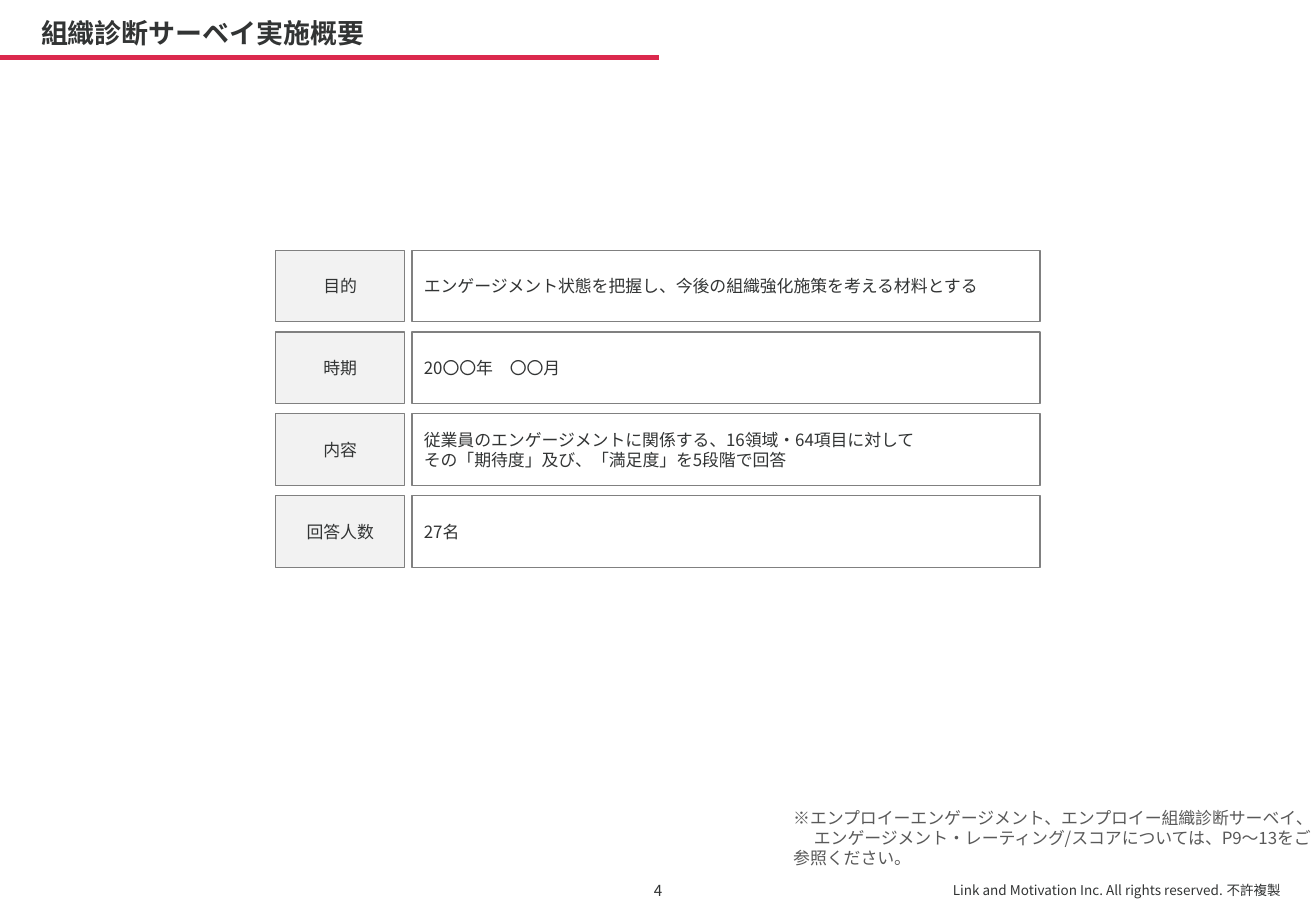
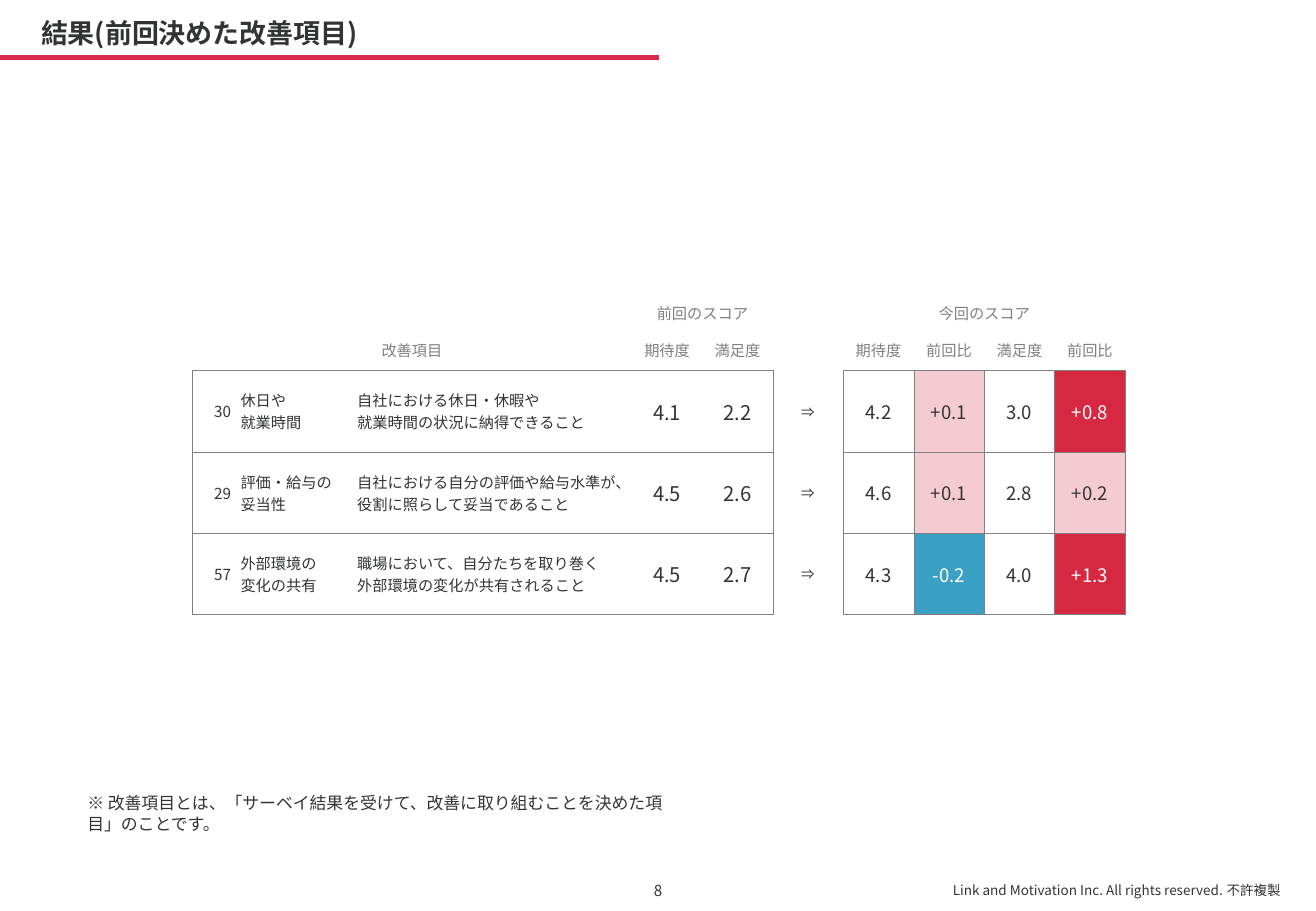
from lxml import etree
from pptx import Presentation
from pptx.dml.color import RGBColor
from pptx.enum.shapes import MSO_CONNECTOR, MSO_SHAPE
from pptx.enum.text import MSO_ANCHOR, PP_ALIGN
from pptx.oxml.ns import qn
from pptx.util import Inches, Pt

FONT = "Noto Sans CJK JP"
INK = RGBColor(0x32, 0x34, 0x34)
NOTE_GRAY = RGBColor(0x59, 0x59, 0x59)
GRAY = RGBColor(0x80, 0x80, 0x80)
LABEL_GRAY = RGBColor(0xF2, 0xF2, 0xF2)
WHITE = RGBColor(0xFF, 0xFF, 0xFF)
TITLE_RED = RGBColor(0xDB, 0x29, 0x4D)
RED = RGBColor(0xD6, 0x29, 0x41)
PINK = RGBColor(0xF5, 0xCB, 0xD2)
BLUE = RGBColor(0x3A, 0xA1, 0xC5)


def write(frame, text, size=10, color=INK, bold=False, align=PP_ALIGN.LEFT,
          spacing=None):
    """Fill a text frame, one paragraph per line of text."""
    frame.word_wrap = True
    for i, line in enumerate(text.split("\n")):
        paragraph = frame.paragraphs[0] if i == 0 else frame.add_paragraph()
        paragraph.alignment = align
        if spacing:
            paragraph.line_spacing = spacing
        run = paragraph.add_run()
        run.text = line
        run.font.name = FONT
        run.font.size = Pt(size)
        run.font.bold = bold
        run.font.color.rgb = color
        etree.SubElement(run.font._element, qn("a:ea"), typeface=FONT)
    return frame


def add_text(slide, left, top, width, height, text, anchor=MSO_ANCHOR.MIDDLE, **style):
    box = slide.shapes.add_textbox(Inches(left), Inches(top), Inches(width), Inches(height))
    box.text_frame.vertical_anchor = anchor
    return write(box.text_frame, text, **style)


prs = Presentation()
prs.slide_width = Inches(10.83)
prs.slide_height = Inches(7.5)

# Shared title, rule and footer
slides = []
for title, page in [("組織診断サーベイ実施概要", "4"), ("結果(前回決めた改善項目)", "8")]:
    slide = prs.slides.add_slide(prs.slide_layouts[6])
    rule = slide.shapes.add_connector(
        MSO_CONNECTOR.STRAIGHT, Inches(0), Inches(0.47), Inches(5.42), Inches(0.47))
    rule.line.color.rgb = TITLE_RED
    rule.line.width = Pt(3)
    etree.SubElement(rule._element.spPr, qn("a:effectLst"))
    add_text(slide, 0.24, 0, 7.37, 0.46, title, anchor=MSO_ANCHOR.BOTTOM,
             size=16, bold=True, spacing=0.9)
    add_text(slide, 5.17, 7.16, 0.49, 0.34, page, size=9, align=PP_ALIGN.CENTER)
    add_text(slide, 7.68, 7.21, 2.96, 0.24,
             "Link and Motivation Inc. All rights reserved. 不許複製",
             size=8, align=PP_ALIGN.RIGHT)
    slides.append(slide)
overview, results = slides

# Overview: label and description per row
survey_facts = [
    ("目的", "エンゲージメント状態を把握し、今後の組織強化施策を考える材料とする"),
    ("時期", "20〇〇年　〇〇月"),
    ("内容", "従業員のエンゲージメントに関係する、16領域・64項目に対して\n"
             "その「期待度」及び、「満足度」を5段階で回答"),
    ("回答人数", "27名"),
]
first_top, last_top = 2.06, 4.08
row_step = (last_top - first_top) / (len(survey_facts) - 1)
for i, (label, description) in enumerate(survey_facts):
    for left, width, text, fill, align in [
        (2.27, 1.06, label, LABEL_GRAY, PP_ALIGN.CENTER),
        (3.39, 5.17, description, WHITE, PP_ALIGN.LEFT),
    ]:
        panel = overview.shapes.add_shape(
            MSO_SHAPE.RECTANGLE, Inches(left), Inches(first_top + i * row_step),
            Inches(width), Inches(0.59))
        panel.shadow.inherit = False
        panel.fill.solid()
        panel.fill.fore_color.rgb = fill
        panel.line.color.rgb = GRAY
        panel.line.width = Pt(0.75)
        panel.text_frame.vertical_anchor = MSO_ANCHOR.MIDDLE
        write(panel.text_frame, text, align=align, spacing=Pt(12))

# Overview: note, second line indented under the mark
reference_note = add_text(
    overview, 6.43, 6.6, 4.4, 0.6,
    "※エンプロイーエンゲージメント、エンプロイー組織診断サーベイ、\n"
    "エンゲージメント・レーティング/スコアについては、P9〜13をご参照ください。",
    anchor=MSO_ANCHOR.TOP, color=NOTE_GRAY, spacing=Pt(12))
reference_note.margin_right = 0
reference_note.paragraphs[1]._p.get_or_add_pPr().set("indent", str(Inches(0.17)))

# Results: score table
ARROW_COL = 5
headers = {
    (0, 0): "改善項目", (0, 3): "前回のスコア", (0, 6): "今回のスコア",
    (1, 3): "期待度", (1, 4): "満足度", (1, 6): "期待度",
    (1, 7): "前回比", (1, 8): "満足度", (1, 9): "前回比",
}
items = [
    ("30", "休日や\n就業時間", "自社における休日・休暇や\n就業時間の状況に納得できること",
     "4.1", "2.2", "⇒", "4.2", "+0.1", "3.0", "+0.8"),
    ("29", "評価・給与の\n妥当性", "自社における自分の評価や給与水準が、\n役割に照らして妥当であること",
     "4.5", "2.6", "⇒", "4.6", "+0.1", "2.8", "+0.2"),
    ("57", "外部環境の\n変化の共有", "職場において、自分たちを取り巻く\n外部環境の変化が共有されること",
     "4.5", "2.7", "⇒", "4.3", "-0.2", "4.0", "+1.3"),
]
col_widths = [0.36, 0.96, 2.3] + [0.58] * 7
row_heights = [0.23, 0.3] + [0.67] * len(items)
sizes = [9, 9, 9, 12, 12, 8, 11, 11, 11, 11]
aligns = [PP_ALIGN.RIGHT, PP_ALIGN.LEFT, PP_ALIGN.LEFT] + [PP_ALIGN.CENTER] * 7

table_frame = results.shapes.add_table(
    len(row_heights), len(col_widths), Inches(1.58), Inches(2.37),
    Inches(sum(col_widths)), Inches(sum(row_heights)))
scores = table_frame.table
scores.first_row = scores.horz_banding = False
# Table style without grid lines
scores._tbl.tblPr.find(qn("a:tableStyleId")).text = "{2D5ABB26-0587-4C30-8999-92F81FD0307C}"
for column, width in zip(scores.columns, col_widths):
    column.width = Inches(width)
for row, height in zip(scores.rows, row_heights):
    row.height = Inches(height)
for (r1, c1), (r2, c2) in [((0, 0), (1, 2)), ((0, 3), (0, 4)), ((0, 6), (0, 9))]:
    scores.cell(r1, c1).merge(scores.cell(r2, c2))

for r in range(len(row_heights)):
    for c in range(len(col_widths)):
        cell = scores.cell(r, c)
        is_item = r >= 2
        text = items[r - 2][c] if is_item else headers.get((r, c), "")
        fill, color = WHITE, INK if is_item else GRAY
        if is_item and c in (7, 9):
            change = float(text)
            fill = BLUE if change < 0 else RED if change >= 0.5 else PINK
            color = INK if fill == PINK else WHITE

        cell.margin_left = cell.margin_right = Inches(0.04)
        cell.margin_top = Inches(0.04 if is_item else 0)
        cell.margin_bottom = Inches(0.04 if is_item else 0.08 if r == 1 or c == 0 else 0)
        cell.vertical_anchor = MSO_ANCHOR.MIDDLE if is_item else MSO_ANCHOR.BOTTOM
        if text:
            write(cell.text_frame, text, size=sizes[c] if is_item else 9, color=color,
                  align=aligns[c] if is_item else PP_ALIGN.CENTER)
        cell.fill.solid()
        cell.fill.fore_color.rgb = fill

        # Frame around the earlier scores, full grid on the new ones
        in_box = is_item and c != ARROW_COL
        borders = {
            "a:lnL": in_box and (c == 0 or c > ARROW_COL),
            "a:lnR": in_box and c >= ARROW_COL - 1,
            "a:lnT": in_box,
            "a:lnB": in_box or (r == 1 and c != ARROW_COL) or (r == 0 and c < 3),
        }
        cell_props = cell._tc.get_or_add_tcPr()
        for position, tag in enumerate(tag for tag, drawn in borders.items() if drawn):
            border = etree.Element(qn(tag), w=str(Pt(0.25)))
            solid = etree.SubElement(border, qn("a:solidFill"))
            etree.SubElement(solid, qn("a:srgbClr"), val=str(GRAY))
            cell_props.insert(position, border)

# Results: note
add_text(results, 0.62, 6.45, 5.1, 0.49,
         "※ 改善項目とは、「サーベイ結果を受けて、改善に取り組むことを決めた項目」のことです。",
         spacing=Pt(12))

prs.save("out.pptx")
